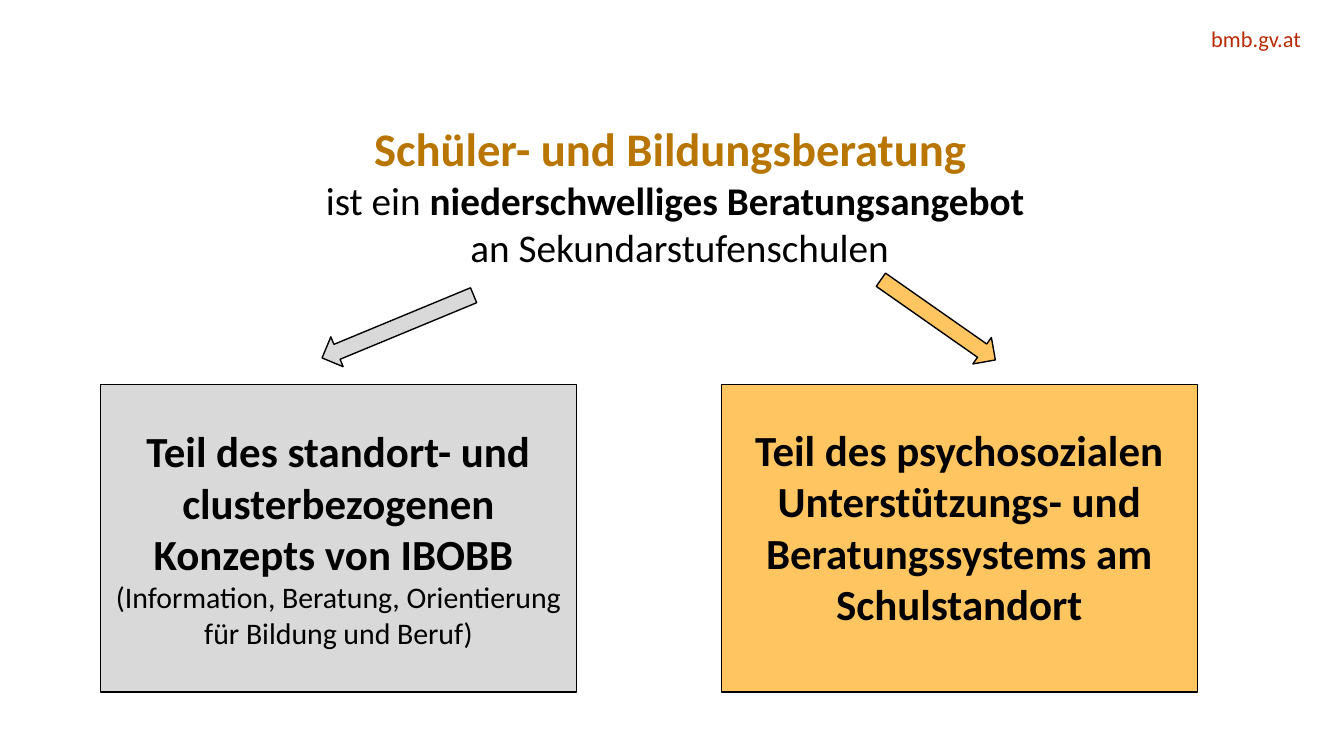
"""Build a slide on school counselling and its two supporting roles."""
from pptx import Presentation, util as u
from pptx.dml.color import RGBColor
from pptx.enum import shapes, text

BLACK = RGBColor(0x00, 0x00, 0x00)
GREY = RGBColor(0xD9, 0xD9, 0xD9)
AMBER = RGBColor(0xFF, 0xC5, 0x60)
OCHRE = RGBColor(0xB8, 0x75, 0x00)
RED = RGBColor(0xB9, 0x2B, 0x06)
FONT = "Calibri"

HEADLINE = {"size": u.Pt(25), "bold": True, "color": OCHRE}
LEAD = {"size": u.Pt(21), "bold": False, "color": BLACK}
STRONG = LEAD | {"bold": True}
ROLE = {"size": u.Pt(23), "bold": True, "color": BLACK}
NOTE = {"size": u.Pt(16), "bold": False, "color": BLACK}
SITE = {"size": u.Pt(12), "bold": False, "color": RED}

SITE_TEXT = [[("bmb.gv.at", SITE)]]
TITLE_TEXT = [
    [("Schüler- und Bildungsberatung \v", HEADLINE), ("ist ein ", LEAD),
     ("niederschwelliges Beratungsangebot", STRONG)],
    [(" ", STRONG), ("an Sekundarstufenschulen", LEAD)],
]
ROLES = [
    {"fill": GREY, "top_inset": 0.3, "arrow": (2.35, 2.31, 1.22, 0.24), "angle": 157.5,
     "text": [[("Teil des standort- und clusterbezogenen Konzepts von IBOBB ", ROLE)],
              [("(Information, Beratung, Orientierung für Bildung und Beruf)", NOTE)]]},
    {"fill": AMBER, "top_inset": 0.29, "arrow": (6.46, 2.26, 1.04, 0.24), "angle": 35,
     "text": [[("Teil des psychosozialen Unterstützungs- und Beratungssystems "
                "am Schulstandort", ROLE)]]},
]
SLIDE_WIDTH = u.Inches(10)
SLIDE_HEIGHT = SLIDE_WIDTH * 9 // 16
BOX_LEFT, BOX_TOP, BOX_WIDTH, BOX_HEIGHT, BOX_STEP = 0.75, 2.86, 3.54, 2.29, 4.62


def inches(*lengths):
    return [u.Inches(length) for length in lengths]


def write(box, paragraphs, align, anchor, insets):
    frame = box.text_frame
    left, top, right, bottom = inches(*insets)
    values = {"word_wrap": True, "vertical_anchor": anchor, "margin_left": left,
              "margin_top": top, "margin_right": right, "margin_bottom": bottom}
    for name, value in values.items():
        setattr(frame, name, value)
    for index, spans in enumerate(paragraphs):
        para = frame.add_paragraph() if index else frame.paragraphs[0]
        para.alignment = align
        for content, style in spans:
            add_span(para, content, style)


def add_span(para, content, style):
    span = para.add_run()
    span.text = content.rstrip("\v")
    span.font.name = FONT
    span.font.color.rgb = style["color"]
    for name in ("size", "bold"):
        setattr(span.font, name, style[name])
    if content.endswith("\v"):
        para.add_line_break()


def add_outlined(page, kind, place, fill):
    shape = page.shapes.add_shape(kind, *inches(*place))
    shape.shadow.inherit = False
    shape.fill.solid()
    shape.fill.fore_color.rgb = fill
    shape.line.color.rgb = BLACK
    shape.line.width = u.Pt(0.75)
    return shape


def main():
    deck = Presentation()
    deck.slide_width, deck.slide_height = SLIDE_WIDTH, SLIDE_HEIGHT
    page = deck.slides.add_slide(deck.slide_layouts[6])
    align, anchor = text.PP_ALIGN, text.MSO_ANCHOR

    site = page.shapes.add_textbox(*inches(7.27, 0.19, 2.41, 0.2))
    write(site, SITE_TEXT, align.RIGHT, anchor.TOP, (0, 0, 0, 0))
    title = page.shapes.add_textbox(*inches(0.66, 0.79, 8.73, 1.22))
    write(title, TITLE_TEXT, align.CENTER, anchor.BOTTOM, (0, 0, 0, 0))

    for column, role in enumerate(ROLES):
        arrow = add_outlined(page, shapes.MSO_SHAPE.RIGHT_ARROW, role["arrow"], role["fill"])
        arrow.rotation = role["angle"]
        place = (BOX_LEFT + column * BOX_STEP, BOX_TOP, BOX_WIDTH, BOX_HEIGHT)
        box = add_outlined(page, shapes.MSO_SHAPE.RECTANGLE, place, role["fill"])
        write(box, role["text"], align.CENTER, anchor.TOP, (0.1, role["top_inset"], 0.1, 0.05))

    deck.save("out.pptx")


if __name__ == "__main__":
    main()
